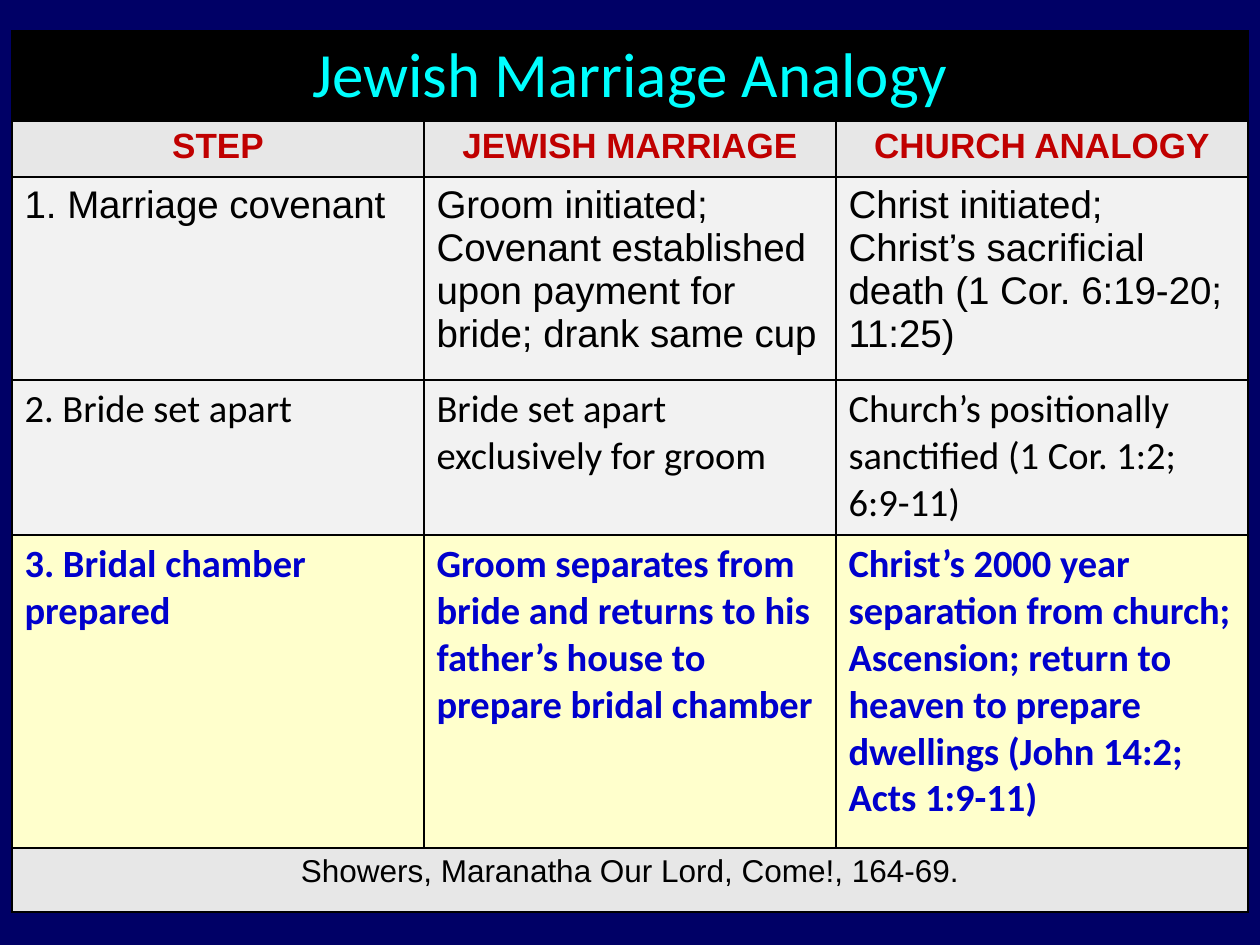
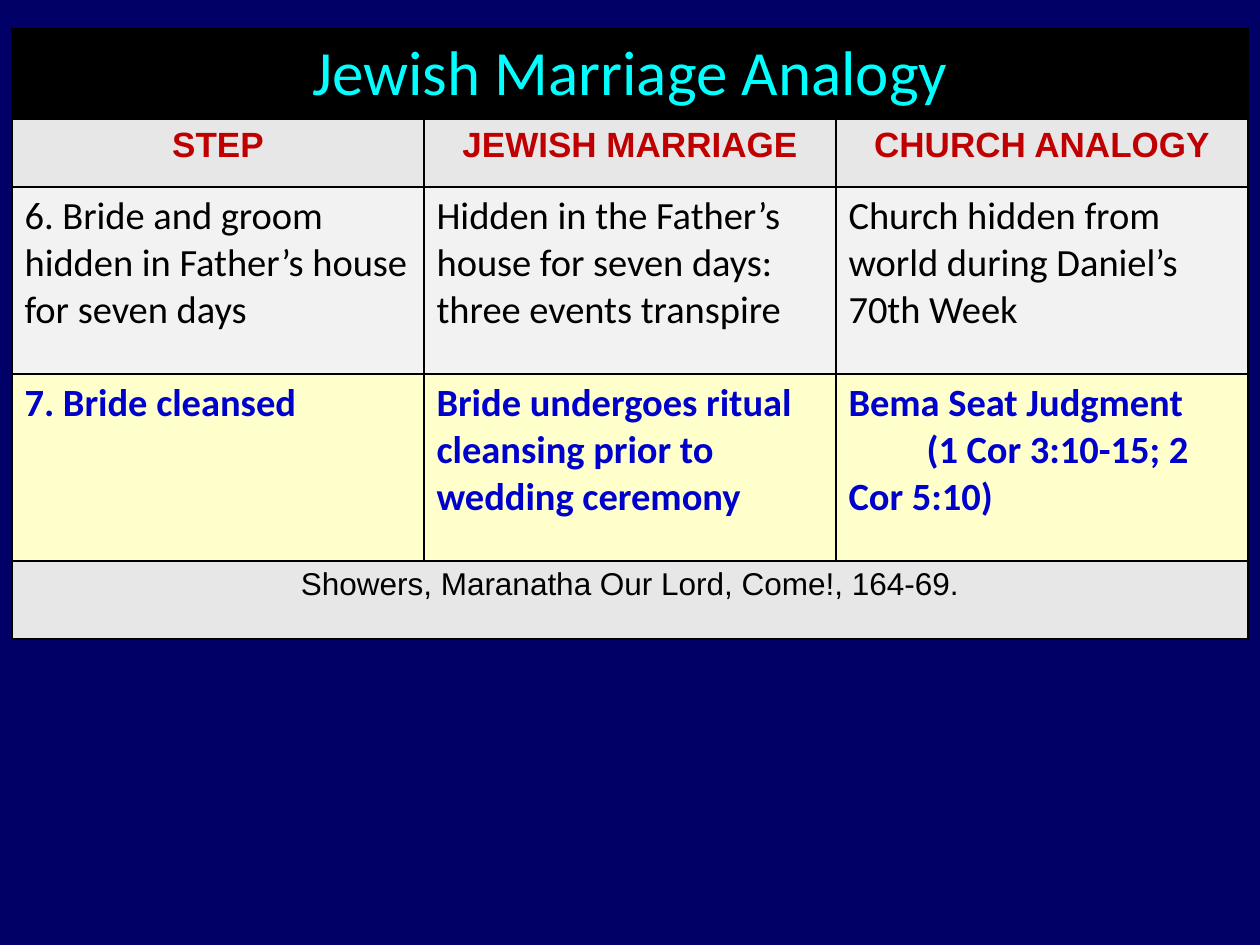
"""Build two slides of a table comparing Jewish marriage steps with the church."""
import pptx
import pptx.dml.color
import pptx.enum.text
import pptx.oxml
import pptx.oxml.ns
import pptx.util

RGBColor = pptx.dml.color.RGBColor
NAVY = RGBColor(0x00, 0x00, 0x66)
BLACK = RGBColor(0x00, 0x00, 0x00)
CYAN = RGBColor(0x00, 0xFF, 0xFF)
RED = RGBColor(0xC0, 0x00, 0x00)
BLUE = RGBColor(0x00, 0x00, 0xCC)
GREY = RGBColor(0xE7, 0xE7, 0xE7)
LIGHT_GREY = RGBColor(0xF2, 0xF2, 0xF2)
YELLOW = RGBColor(0xFF, 0xFF, 0xCC)

PX_PER_INCH = 126
SLIDE_WIDTH, SLIDE_HEIGHT = 1260, 945
TABLE_LEFT, COLUMN_WIDTH, COLUMN_COUNT = 12, 412, 3
TITLE_HEIGHT = 90
CITATION_INDENT = 78

LEFT = pptx.enum.text.PP_ALIGN.LEFT
CENTER = pptx.enum.text.PP_ALIGN.CENTER

TITLE = "Jewish Marriage Analogy"
HEADINGS = ["STEP", "JEWISH MARRIAGE", "CHURCH ANALOGY"]
REFERENCE = "Showers, Maranatha Our Lord, Come!, 164-69."


def px(length):
    """Turn a length in px into EMU."""
    return pptx.util.Emu(round(length * 914400 / PX_PER_INCH))


def row_style(fill, color, name, size, bold=False, alignment=LEFT):
    """Collect the format values of one kind of table row."""
    font = {"name": name, "size": pptx.util.Pt(size), "bold": bold}
    return {"fill": fill, "color": color, "font": font, "alignment": alignment}


class Deck:
    """Hold the row styles and the current slide."""

    styles = {
        "title": row_style(BLACK, CYAN, "Calibri", 36, alignment=CENTER),
        "heading": row_style(GREY, RED, "Arial", 20, True, CENTER),
        "arial step": row_style(LIGHT_GREY, BLACK, "Arial", 22),
        "step": row_style(LIGHT_GREY, BLACK, "Calibri", 22),
        "highlight": row_style(YELLOW, BLUE, "Calibri", 22, True),
        "reference": row_style(GREY, BLACK, "Arial", 18, alignment=CENTER),
    }

    def __init__(self):
        """Start a presentation of the right size."""
        self.presentation = pptx.Presentation()
        self.presentation.slide_width = px(SLIDE_WIDTH)
        self.presentation.slide_height = px(SLIDE_HEIGHT)
        self.slide = None

    def add_slide(self):
        """Add a blank navy slide and make it current."""
        layout = self.presentation.slide_layouts[6]
        self.slide = self.presentation.slides.add_slide(layout)
        fill = self.slide.background.fill
        fill.solid()
        fill.fore_color.rgb = NAVY

    def add_table(self, top, rows):
        """Add a table from rows of (style name, height, texts)."""
        height = sum(row_height for _, row_height, _ in rows)
        frame = self.slide.shapes.add_table(
            len(rows), COLUMN_COUNT, px(TABLE_LEFT), px(top),
            px(COLUMN_WIDTH * COLUMN_COUNT), px(height))
        table = frame.table
        table.first_row = table.horz_banding = False
        for column in table.columns:
            column.width = px(COLUMN_WIDTH)
        for index, (style_name, row_height, texts) in enumerate(rows):
            table.rows[index].height = px(row_height)
            cells = list(table.rows[index].cells)
            if len(texts) == 1:
                cells[0].merge(cells[-1])
            for cell in cells:
                self.format_cell(cell, self.styles[style_name]["fill"])
            for cell, text in zip(cells, texts):
                self.write_text(cell, text, self.styles[style_name])

    def format_cell(self, cell, color):
        """Fill a cell and draw its four borders."""
        cell.fill.solid()
        cell.fill.fore_color.rgb = color
        properties = cell._tc.get_or_add_tcPr()
        for index, side in enumerate(("lnL", "lnR", "lnT", "lnB")):
            border = pptx.oxml.parse_xml(
                f'<a:{side} {pptx.oxml.ns.nsdecls("a")} w="{pptx.util.Pt(1)}">'
                f'<a:solidFill><a:srgbClr val="{BLACK}"/></a:solidFill></a:{side}>')
            properties.insert(index, border)

    def write_text(self, cell, text, style):
        """Write a cell's paragraphs, indenting any after the first."""
        cell.text = text
        for index, paragraph in enumerate(cell.text_frame.paragraphs):
            paragraph.alignment = style["alignment"]
            if index:
                paragraph._p.get_or_add_pPr().set("indent", str(px(CITATION_INDENT)))
            font = paragraph.runs[0].font
            font.color.rgb = style["color"]
            for name, value in style["font"].items():
                setattr(font, name, value)

    def add_analogy(self, top, heading_height, steps, reference_height):
        """Add a slide with the steps between the shared title and reference."""
        self.add_slide()
        self.add_table(top, [
            ("title", TITLE_HEIGHT, [TITLE]),
            ("heading", heading_height, HEADINGS),
            *steps,
            ("reference", reference_height, [REFERENCE]),
        ])


def main():
    """Build and save the presentation."""
    deck = Deck()
    deck.add_analogy(31, 56, [
        ("arial step", 203, [
            "1. Marriage covenant",
            "Groom initiated; Covenant established upon payment for bride; "
            "drank same cup",
            "Christ initiated; Christ’s sacrificial death (1 Cor. 6:19-20; 11:25)"]),
        ("step", 155, [
            "2. Bride set apart",
            "Bride set apart exclusively for groom",
            "Church’s positionally sanctified (1 Cor. 1:2; 6:9-11)"]),
        ("highlight", 313, [
            "3. Bridal chamber prepared",
            "Groom separates from bride and returns to his father’s house "
            "to prepare bridal chamber",
            "Christ’s 2000 year separation from church; Ascension; return to "
            "heaven to prepare dwellings (John 14:2; Acts 1:9-11)"]),
    ], 64)
    deck.add_analogy(29, 68, [
        ("step", 187, [
            "6. Bride and groom hidden in Father’s house for seven days",
            "Hidden in the Father’s house for seven days: three events transpire",
            "Church hidden from world during Daniel’s 70th Week"]),
        ("highlight", 187, [
            "7. Bride cleansed",
            "Bride undergoes ritual cleansing prior to wedding ceremony",
            "Bema Seat Judgment\n(1 Cor 3:10-15; 2 Cor 5:10)"]),
    ], 78)
    deck.presentation.save("out.pptx")


if __name__ == "__main__":
    main()
